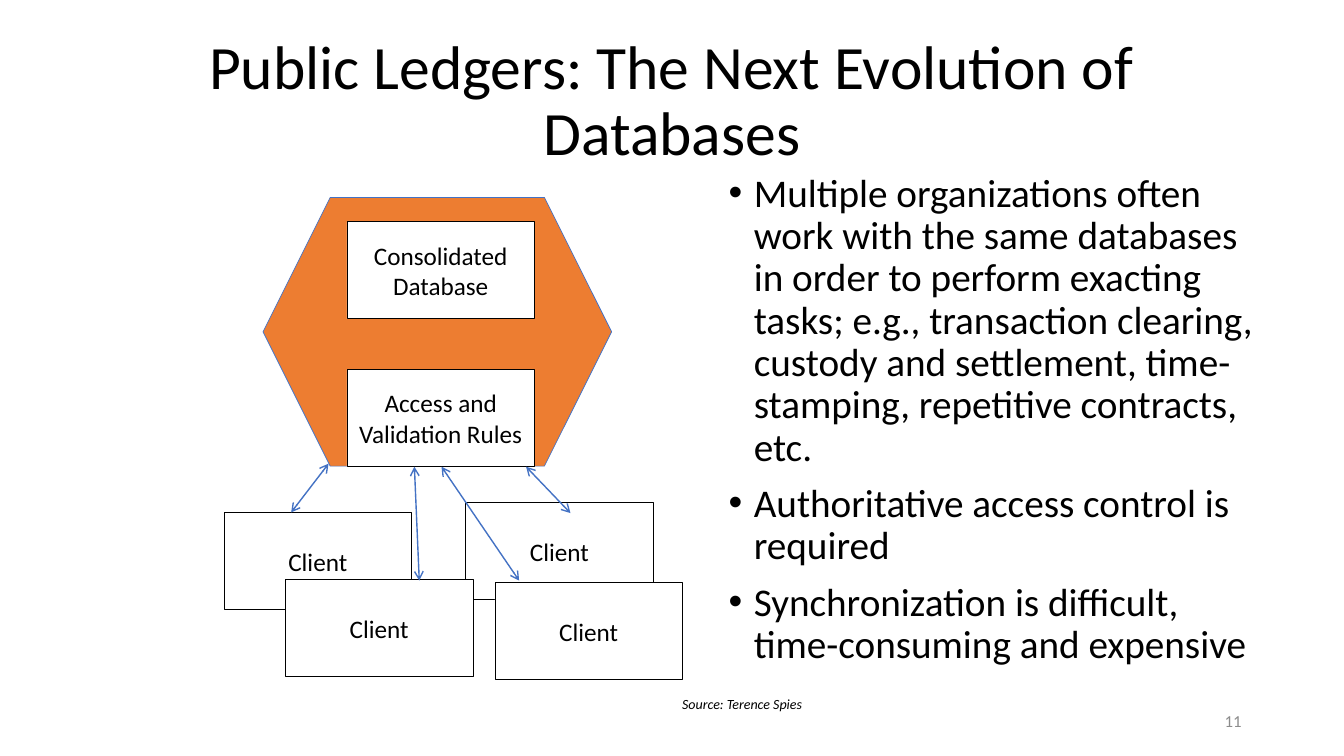
"""Build the slide on public ledgers as the next evolution of databases."""
from lxml.etree import SubElement
from pptx import Presentation
from pptx.dml.color import RGBColor
from pptx.enum.shapes import MSO_CONNECTOR, MSO_SHAPE
from pptx.enum.text import MSO_ANCHOR, PP_ALIGN
from pptx.oxml.ns import qn
from pptx.util import Pt

COLORS = {"text": "000000", "paper": "FFFFFF", "ledger": "ED7D31",
          "accent": "4472C4", "muted": "8C8C8C"}
BOX_WIDTH, BOX_HEIGHT = 134, 69.3


def color(name):
    return RGBColor.from_string(COLORS[name])


def write(frame, text, size=18, ink="text", align=PP_ALIGN.LEFT, anchor=MSO_ANCHOR.TOP,
          spacing=1.0, gap=0, bullet=False, italic=None, wrap=True):
    frame.word_wrap = wrap
    frame.vertical_anchor = anchor
    for index, line in enumerate(text.split("\n")):
        paragraph = frame.paragraphs[0] if index == 0 else frame.add_paragraph()
        paragraph.text = line
        paragraph.alignment = align
        paragraph.line_spacing = spacing
        paragraph.space_before = Pt(gap if index else 0)
        if bullet:
            properties = paragraph._p.get_or_add_pPr()
            properties.set("marL", str(Pt(18)))
            properties.set("indent", str(Pt(-18)))
            SubElement(properties, qn("a:buFont"), typeface="Arial")
            SubElement(properties, qn("a:buChar"), char="•")
        font = paragraph.font
        font.name, font.size, font.italic = "Calibri", Pt(size), italic
        font.color.rgb = color(ink)


deck = Presentation()
deck.slide_width, deck.slide_height = Pt(960), Pt(540)
slide = deck.slides.add_slide(deck.slide_layouts[6])
shapes = slide.shapes

ledger = shapes.add_shape(MSO_SHAPE.HEXAGON, Pt(187.9), Pt(141), Pt(249), Pt(192))
ledger.shadow.inherit = False
ledger.fill.solid()
ledger.fill.fore_color.rgb = color("ledger")
ledger.line.color.rgb = color("accent")
ledger.line.width = Pt(0.5)

title = shapes.add_textbox(Pt(66), Pt(21), Pt(828), Pt(104.4))
write(title.text_frame, "Public Ledgers: The Next Evolution of Databases", size=44,
      align=PP_ALIGN.CENTER, anchor=MSO_ANCHOR.MIDDLE, spacing=0.9)

for label, left, top in [
    ("Client", 160, 366),
    ("Client", 332.6, 359),
    ("Client", 353.5, 416.2),
    ("Client", 203.8, 414),
    ("Consolidated Database", 247.8, 158.4),
    ("Access and Validation Rules", 247.8, 263.8),
]:
    component = shapes.add_shape(MSO_SHAPE.RECTANGLE, Pt(left), Pt(top),
                                 Pt(BOX_WIDTH), Pt(BOX_HEIGHT))
    component.shadow.inherit = False
    component.fill.solid()
    component.fill.fore_color.rgb = color("paper")
    component.line.color.rgb = color("text")
    component.line.width = Pt(0.5)
    write(component.text_frame, label, align=PP_ALIGN.CENTER, anchor=MSO_ANCHOR.MIDDLE)

for client_x, client_y, rules_x, rules_y in [
    (370.8, 414.7, 315.4, 333.4),
    (208, 366, 234.7, 331.2),
    (407.5, 366.5, 375.8, 333.4),
    (299.5, 414.7, 296, 333.4),
]:
    access = shapes.add_connector(MSO_CONNECTOR.STRAIGHT, Pt(client_x), Pt(client_y),
                                  Pt(rules_x), Pt(rules_y))
    access.line.color.rgb = color("accent")
    access.line.width = Pt(1)
    outline = access.line._get_or_add_ln()
    for end in ("a:headEnd", "a:tailEnd"):
        SubElement(outline, qn(end), type="arrow")
    SubElement(access._element.spPr, qn("a:effectLst"))

challenges = shapes.add_textbox(Pt(513.4), Pt(120.2), Pt(393.8), Pt(404.6))
write(challenges.text_frame,
      "Multiple organizations often work with the same databases in order to perform "
      "exacting tasks; e.g., transaction clearing, custody and settlement, "
      "time-stamping, repetitive contracts, etc.\n"
      "Authoritative access control is required\n"
      "Synchronization is difficult, time-consuming and expensive",
      size=28, spacing=0.9, gap=10, bullet=True)

source = shapes.add_textbox(Pt(480.2), Pt(493.2), Pt(101.5), Pt(19.4))
write(source.text_frame, "Source: Terence Spies", size=10, italic=True, wrap=False)

page_number = shapes.add_textbox(Pt(678), Pt(500.4), Pt(216), Pt(28.8))
write(page_number.text_frame, "11", size=12, ink="muted", align=PP_ALIGN.RIGHT,
      anchor=MSO_ANCHOR.MIDDLE)

deck.save("out.pptx")
